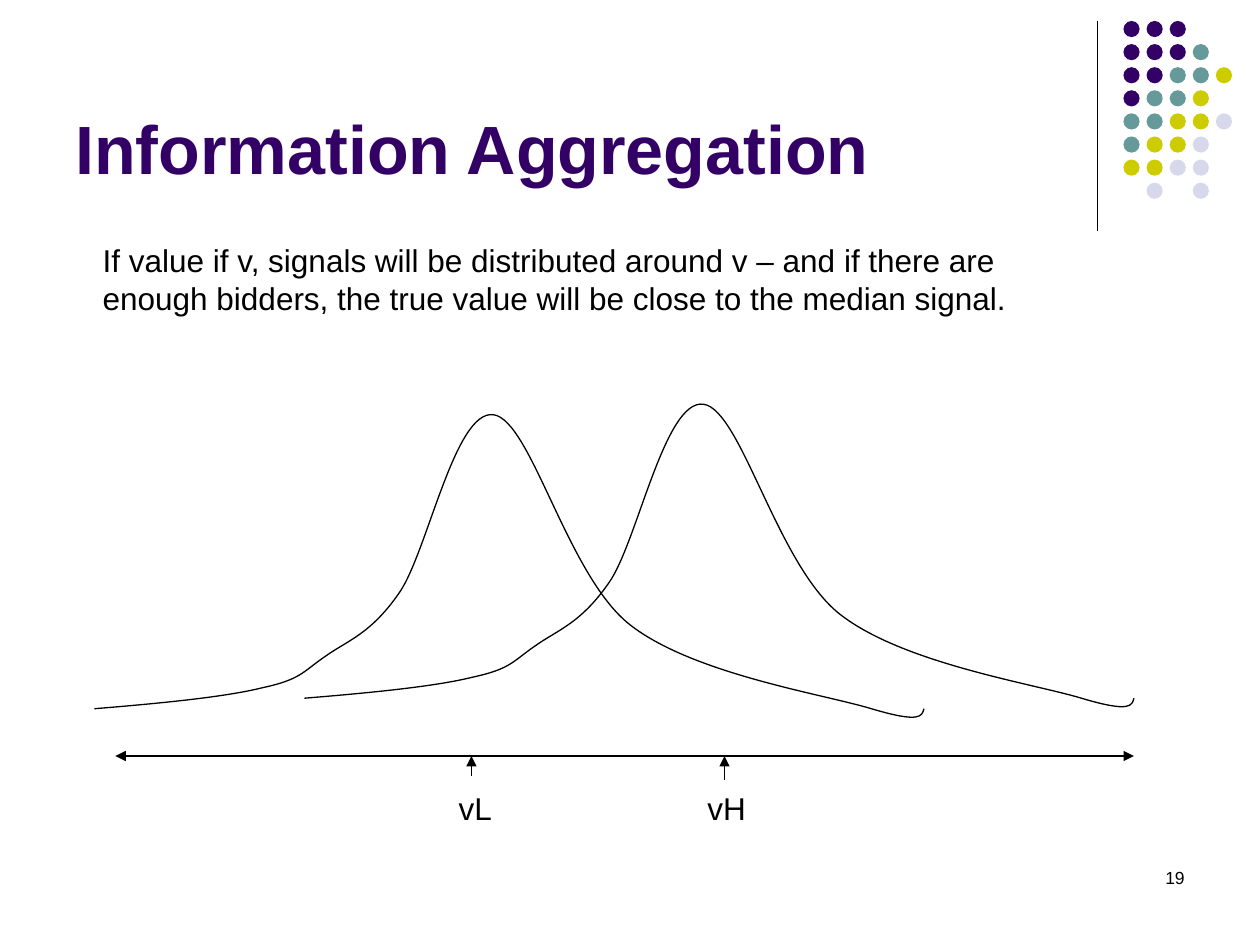
from lxml import etree
from pptx import Presentation, util as u
from pptx.dml.color import RGBColor
from pptx.enum import shapes, text
from pptx.oxml import ns

# Grid of 120 columns by 90 rows: one cell is 1/12 inch
CELL = u.Inches(10) / 120
BLACK, PURPLE = "000000", "330066"
LINE_WIDTH = u.Pt(0.75)

# Dot pattern: one letter per dot, a space for a gap
DOT_COLORS = {"P": PURPLE, "T": "669999", "Y": "CCCC00", "L": "D8D8EC"}
DOT_ROWS = ["PPP", "PPPT", "PPTTY", "PTTY", "TTYYL", "TYYL", "YYLL", " L L"]
DOT_PITCH, DOT_SIZE = 2.2, 1.54

# Bell curve: start point, then three points for each Bézier segment
BELL = [
    (9, 67.5),
    (15.1, 67), (21.4, 66.4), (25, 65.5),
    (28.7, 64.7), (28.8, 64), (31, 62.5),
    (33.1, 61), (35.3, 60.4), (38, 56.5),
    (40.7, 52.7), (43.3, 39), (47, 39.5),
    (50.6, 40), (54, 54.8), (60, 59.5),
    (66, 64.2), (78.4, 66.1), (83, 67.5),
    (87.7, 68.9), (87.8, 68.2), (88, 67.5),
]


def cells(*values):
    return [u.Emu(round(v * CELL)) for v in values]


def color(value):
    return RGBColor.from_string(value)


def style_line(line):
    line.color.rgb = color(BLACK)
    line.width = LINE_WIDTH


def add_text(s, box, content, size, ink=BLACK, bold=False, frame=None, align=text.PP_ALIGN.LEFT):
    tf = s.shapes.add_textbox(*cells(*box)).text_frame
    for name, value in {"word_wrap": True, **(frame or {})}.items():
        setattr(tf, name, value)
    p = tf.paragraphs[0]
    p.alignment = align
    r = p.add_run()
    r.text = content
    for name, value in {"name": "Arial", "size": u.Pt(size), "bold": bold}.items():
        setattr(r.font, name, value)
    r.font.color.rgb = color(ink)


def add_line(s, start, end, arrows=()):
    sp = s.shapes.add_connector(shapes.MSO_CONNECTOR.STRAIGHT, *cells(*start, *end))
    style_line(sp.line)
    ln = sp.line._get_or_add_ln()
    for tag in arrows:
        etree.SubElement(ln, ns.qn(f"a:{tag}"), type="triangle")
    etree.SubElement(sp._element.spPr, ns.qn("a:effectLst"))


def add_dots(s, left, top):
    for row, dots in enumerate(DOT_ROWS):
        for col, key in enumerate(dots):
            if key == " ":
                continue
            box = (left + col * DOT_PITCH, top + row * DOT_PITCH, DOT_SIZE, DOT_SIZE)
            sp = s.shapes.add_shape(shapes.MSO_SHAPE.OVAL, *cells(*box))
            sp.shadow.inherit = False
            sp.fill.solid()
            sp.fill.fore_color.rgb = color(DOT_COLORS[key])
            sp.line.fill.background()


def add_bell(s, dx=0, dy=0):
    start, *points = [cells(x + dx, y + dy) for x, y in BELL]
    builder = s.shapes.build_freeform(*start)
    builder.add_line_segments(points, close=False)
    sp = builder.convert_to_shape()
    sp.shadow.inherit = False
    sp.fill.background()
    style_line(sp.line)
    # Turn each three straight segments into one cubic Bézier segment
    segments = list(sp._element.iter(ns.qn("a:lnTo")))
    for i in range(0, len(segments), 3):
        curve = etree.Element(ns.qn("a:cubicBezTo"))
        segments[i].addprevious(curve)
        for segment in segments[i:i + 3]:
            curve.append(segment[0])
            segment.getparent().remove(segment)


def main():
    prs = Presentation()
    prs.slide_width, prs.slide_height = cells(120, 90)
    s = prs.slides.add_slide(prs.slide_layouts[6])
    grow = {"auto_size": text.MSO_AUTO_SIZE.SHAPE_TO_FIT_TEXT}

    # Corner decoration
    add_line(s, (104.5, 2), (104.5, 22))
    add_dots(s, 107, 2)

    # Title and statement
    add_text(s, (6, 1.5, 99, 17), "Information Aggregation", 39, PURPLE, True,
             {"vertical_anchor": text.MSO_ANCHOR.BOTTOM})
    add_text(s, (8.6, 22.4, 97.9, 8.5),
             "If value if v, signals will be distributed around v – and if there are "
             "enough bidders, the true value will be close to the median signal.",
             18, frame=grow)

    # Value axis and the two signal distributions
    add_line(s, (11, 72), (108, 72), ("headEnd", "tailEnd"))
    add_bell(s)
    add_bell(s, 20, -1)

    # Markers: label, label left, label width, arrow column, arrow foot
    for label, left, width, x, foot in [("vL", 42.5, 5.6, 44.9, 73.9),
                                        ("vH", 66.2, 6.1, 69, 74.3)]:
        add_line(s, (x, foot), (x, 72), ("tailEnd",))
        add_text(s, (left, 74.6, width, 4.8), label, 18,
                 frame={"word_wrap": False, **grow})

    # Slide number
    add_text(s, (86, 82, 28, 6), "19", 10, align=text.PP_ALIGN.RIGHT)
    prs.save("out.pptx")


if __name__ == "__main__":
    main()
